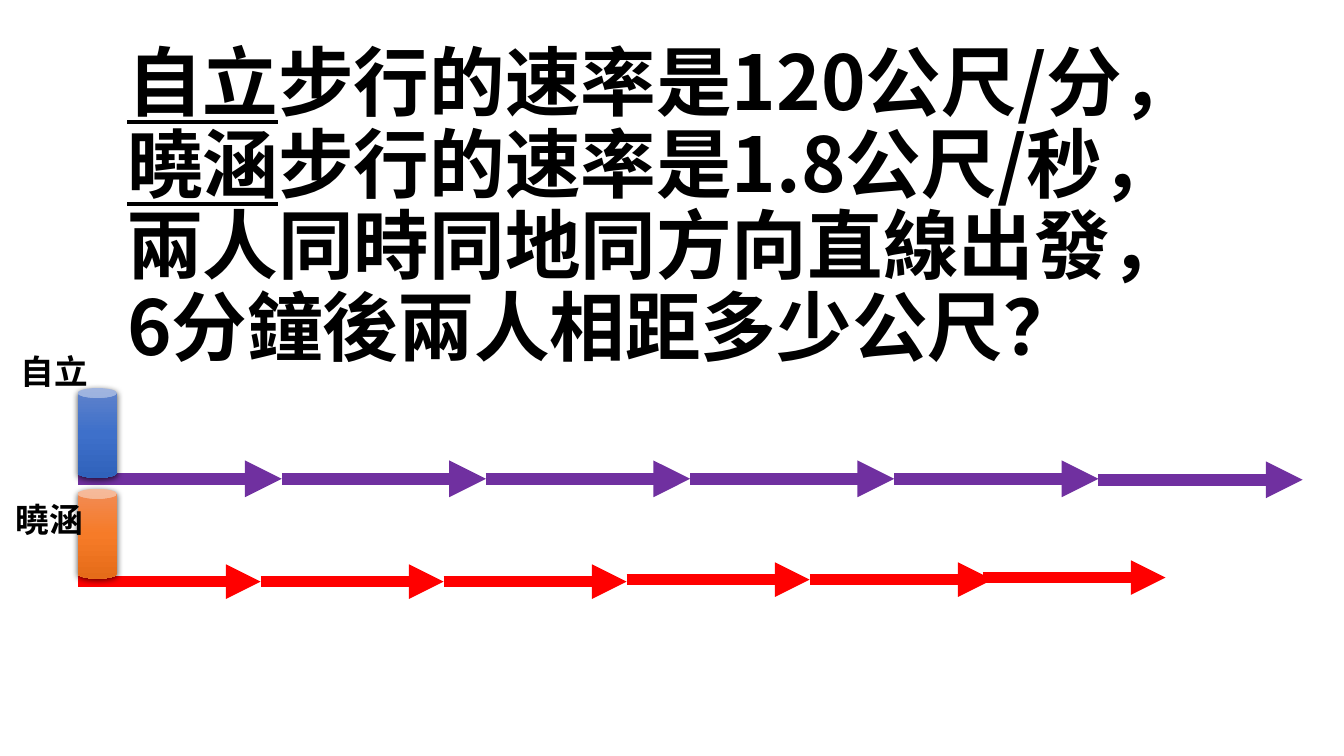
import pptx
import pptx.util
import pptx.dml.color
import pptx.enum.shapes
import pptx.enum.text
import pptx.oxml
import pptx.oxml.ns
import lxml.etree

Inches, Pt = pptx.util.Inches, pptx.util.Pt
qn = pptx.oxml.ns.qn

# Content
FONT = "Noto Sans CJK SC"
COLORS = {"text": "000000", "purple": "7030A0", "red": "FF0000"}
# Each run: wording, underlined
QUESTION = [
    ("自立", True),
    ("步行的速率是120公尺/分，", False),
    ("曉涵", True),
    ("步行的速率是1.8公尺/秒，\n兩人同時同地同方向直線出發，\n6分鐘後兩人相距多少公尺？", False),
]
START_X = 0.77
# levels: height of each minute's arrow; last_shift: overlap of the final arrow
WALKERS = [
    {"name": "自立", "label_at": (0.11, 3.43), "can_top": 3.85,
     "gradient": ["6183CB", "3E70CA", "3062BB"],
     "color": "purple", "weight": 8.75, "step": 2.025, "last_shift": 0,
     "levels": [4.75, 4.75, 4.75, 4.75, 4.75, 4.76]},
    {"name": "曉涵", "label_at": (0.06, 4.9), "can_top": 4.85,
     "gradient": ["F18C57", "F67B28", "E56C19"],
     "color": "red", "weight": 8.25, "step": 1.815, "last_shift": -0.1,
     "levels": [5.77, 5.77, 5.77, 5.75, 5.75, 5.73]},
]


def rgb(key):
    return pptx.dml.color.RGBColor.from_string(COLORS[key])


def add_run(paragraph, text, size, underline=False):
    run = paragraph.add_run()
    run.text = text
    font = run.font
    font.name, font.size, font.bold = FONT, Pt(size), True
    font.underline = underline
    font.color.rgb = rgb("text")
    east_asian = lxml.etree.Element(qn("a:ea"), typeface=FONT)
    run._r.rPr.find(qn("a:latin")).addnext(east_asian)


def add_step(shapes, x, y, walker):
    step = shapes.add_connector(
        pptx.enum.shapes.MSO_CONNECTOR.STRAIGHT,
        Inches(x), Inches(y), Inches(x + walker["step"]), Inches(y))
    step.line.color.rgb = rgb(walker["color"])
    step.line.width = Pt(walker["weight"])
    lxml.etree.SubElement(step.line._get_or_add_ln(), qn("a:tailEnd"), type="triangle")
    lxml.etree.SubElement(step._element.spPr, qn("a:effectLst"))


def add_can(shapes, walker):
    can = shapes.add_shape(
        pptx.enum.shapes.MSO_SHAPE.CAN,
        Inches(START_X), Inches(walker["can_top"]), Inches(0.39), Inches(0.89))
    can.line.fill.background()
    can.fill.gradient()
    can.fill.gradient_angle = 270
    stops = can._element.spPr.find(qn("a:gradFill")).find(qn("a:gsLst"))
    for stop in list(stops):
        stops.remove(stop)
    for position, color in zip((0, 50000, 100000), walker["gradient"]):
        stop = lxml.etree.SubElement(stops, qn("a:gs"), pos=str(position))
        lxml.etree.SubElement(stop, qn("a:srgbClr"), val=color)
    # Soft shadow below
    can.shadow.inherit = False
    effects = can._element.spPr.find(qn("a:effectLst"))
    shadow = lxml.etree.SubElement(
        effects, qn("a:outerShdw"), blurRad=str(Pt(4.5)), dist=str(Pt(1.5)),
        dir="5400000", algn="ctr", rotWithShape="0")
    shade = lxml.etree.SubElement(shadow, qn("a:srgbClr"), val=COLORS["text"])
    lxml.etree.SubElement(shade, qn("a:alpha"), val="63000")


def add_label(shapes, walker):
    left, top = walker["label_at"]
    label = shapes.add_textbox(Inches(left), Inches(top), Inches(0.88), Inches(0.5))
    label.text_frame.word_wrap = False
    label.text_frame.auto_size = pptx.enum.text.MSO_AUTO_SIZE.SHAPE_TO_FIT_TEXT
    add_run(label.text_frame.paragraphs[0], walker["name"], 24)


def main():
    deck = pptx.Presentation()
    deck.slide_width, deck.slide_height = Inches(13.33), Inches(7.5)
    slide = deck.slides.add_slide(deck.slide_layouts[0])
    shapes = slide.shapes
    subtitle = slide.placeholders[1]._element
    subtitle.getparent().remove(subtitle)

    # Question
    question = shapes.title
    question.left, question.top = Inches(1.16), Inches(1.13)
    question.width, question.height = Inches(11.42), Inches(2.61)
    frame = question.text_frame
    frame.word_wrap = True
    frame.auto_size = pptx.enum.text.MSO_AUTO_SIZE.NONE
    frame.vertical_anchor = pptx.enum.text.MSO_ANCHOR.BOTTOM
    paragraph = frame.paragraphs[0]
    paragraph.alignment = pptx.enum.text.PP_ALIGN.LEFT
    paragraph.line_spacing = 0.9
    for text, underline in QUESTION:
        for number, line in enumerate(text.split("\n")):
            if number:
                paragraph.add_line_break()
            add_run(paragraph, line, 54, underline)

    # One arrow per minute walked
    for walker in WALKERS:
        last = len(walker["levels"]) - 1
        for minute, y in enumerate(walker["levels"]):
            shift = walker["last_shift"] if minute == last else 0
            add_step(shapes, START_X + minute * walker["step"] + shift, y, walker)

    # Walkers and their names
    for walker in WALKERS:
        add_can(shapes, walker)
    for walker in WALKERS:
        add_label(shapes, walker)

    deck.save("out.pptx")


if __name__ == "__main__":
    main()
